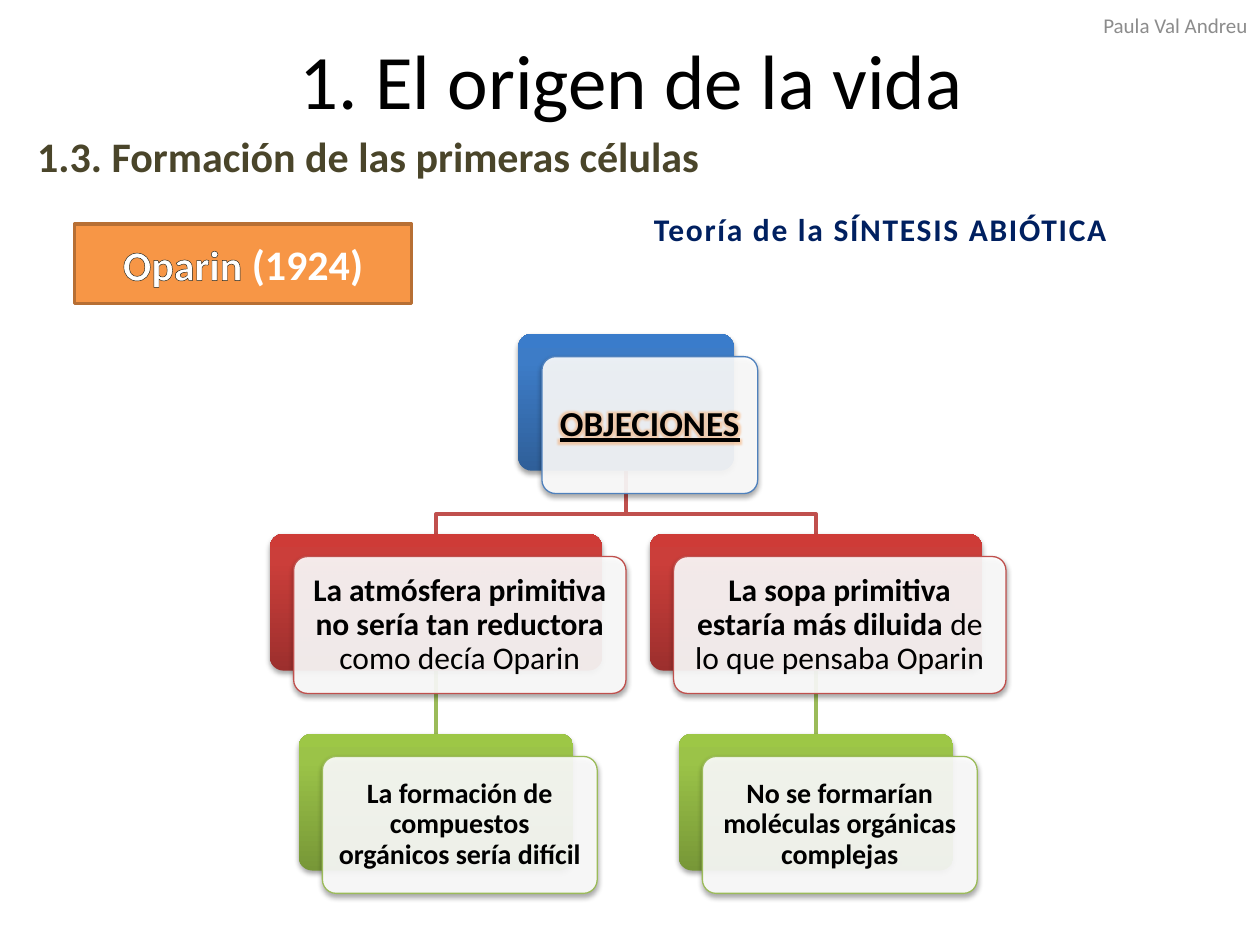
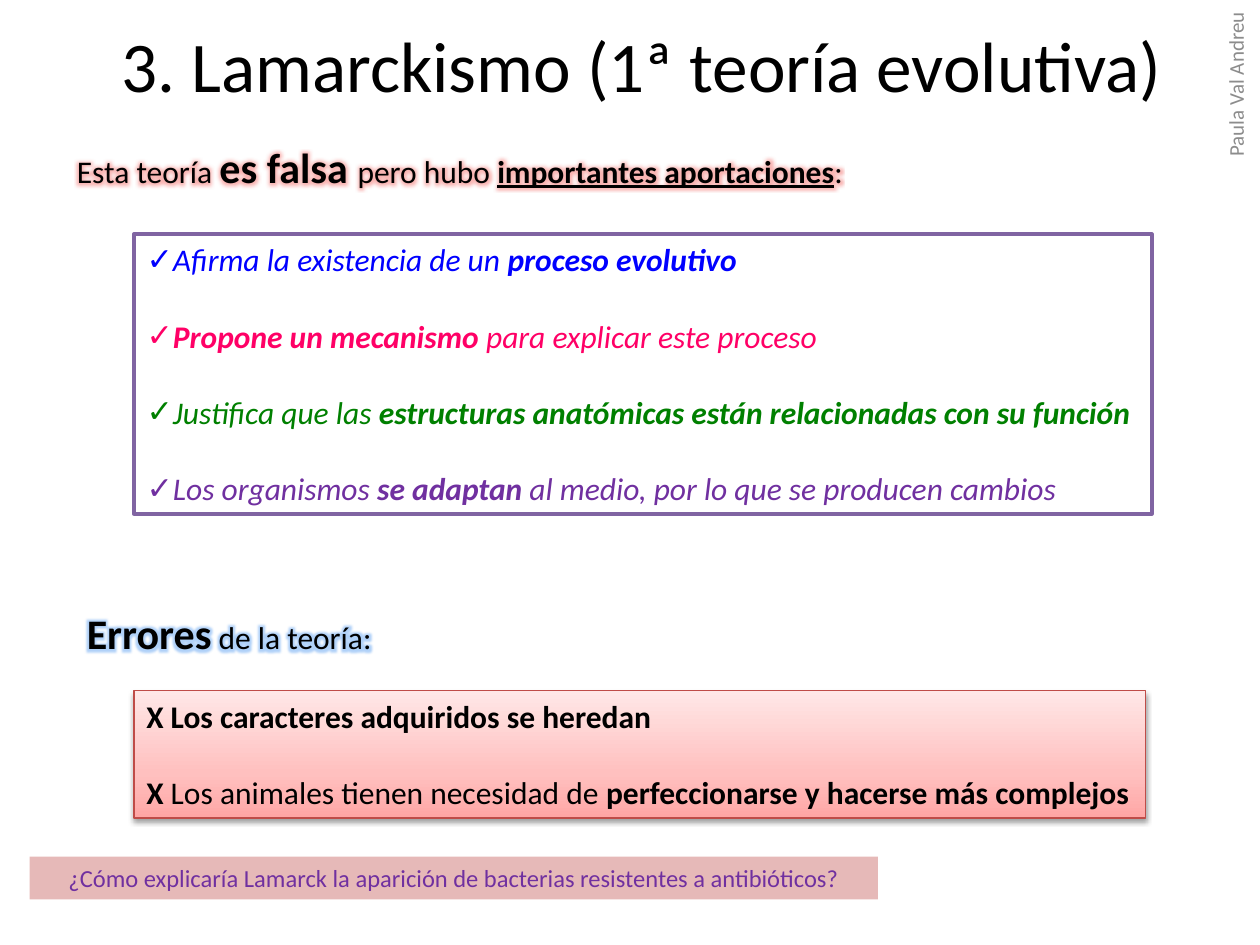
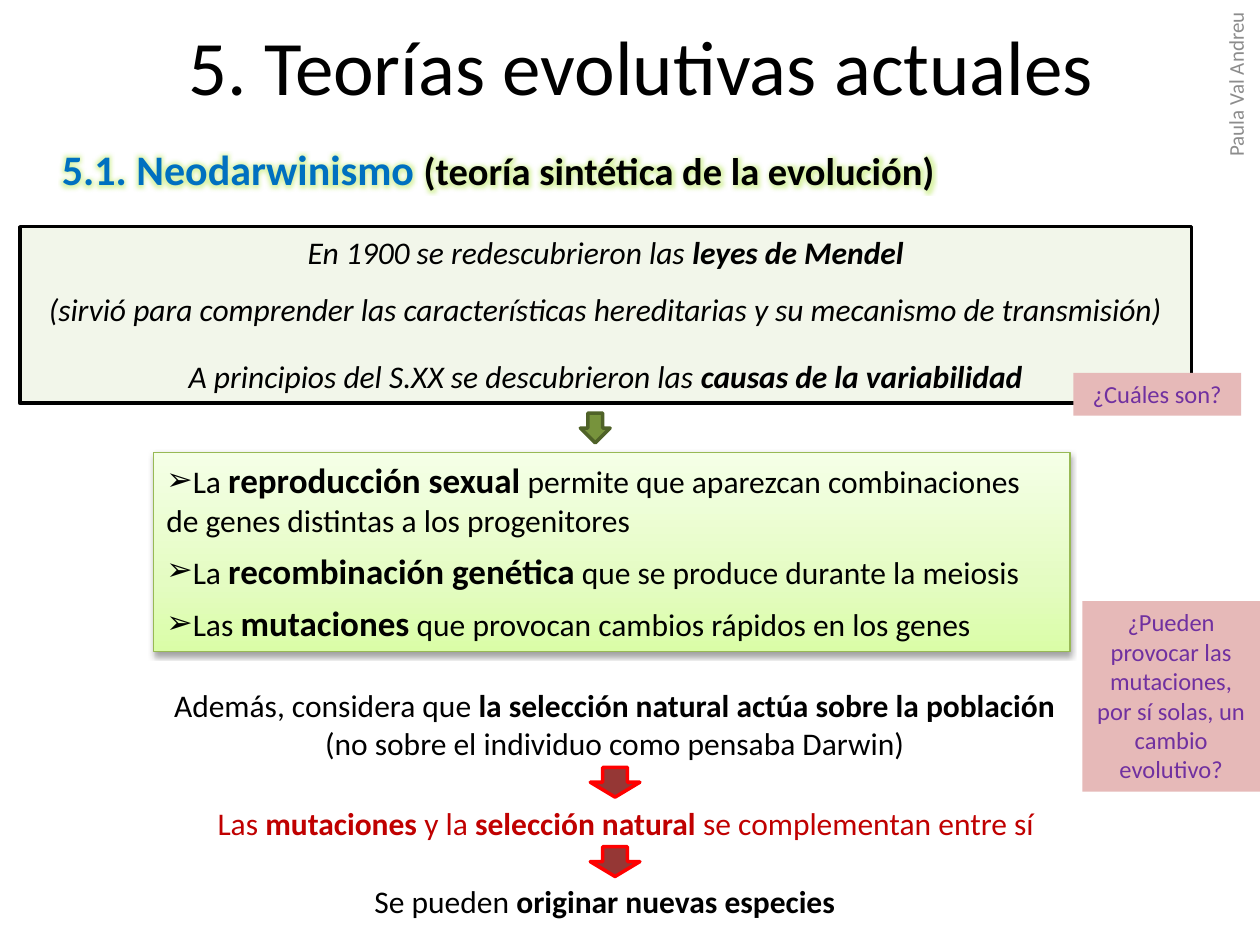
from pptx import Presentation
from pptx.dml.color import RGBColor
from pptx.enum.shapes import MSO_CONNECTOR, MSO_SHAPE
from pptx.enum.text import MSO_ANCHOR, MSO_AUTO_SIZE, PP_ALIGN
from pptx.oxml.ns import qn
from pptx.util import Cm, Pt
from lxml.etree import SubElement

FONT = "Calibri"
BLACK, WHITE, GREY = "000000", "FFFFFF", "8C8C8C"
RED, GREEN, BLUE = "C0504D", "9BBB59", "4F81BD"
PINK, PURPLE = "E6B9B8", "7030A0"

# Gradients as (position, colour), from the bottom up
DEEP_BLUE = [(0, "2F5F99"), (80, "3D7CC7"), (100, "3A7CCB")]
DEEP_RED = [(0, "9C2F2D"), (80, "CB3E3A"), (100, "CE3B37")]
DEEP_GREEN = [(0, "779737"), (80, "9BC348"), (100, "9DC746")]
PALE_RED = [(0, "FFA6A5"), (35, "FFC0BF"), (100, "FFE7E7")]
PALE_GREEN = [(0, "DAFDA7"), (35, "E4FCC2"), (100, "F5FFE7")]


def rgb(value):
    return RGBColor.from_string(value)


def add_xml(parent, tag, **attrs):
    return SubElement(parent, qn(tag), {k: str(v) for k, v in attrs.items()})


def add_color(parent, color, alpha=100):
    clr = add_xml(parent, "a:srgbClr", val=color)
    if alpha < 100:
        add_xml(clr, "a:alpha", val=alpha * 1000)


def add_run(p, text, size=18, color=BLACK, bold=False, italic=False,
            underline=False, spacing=0, outline=None, glow=None):
    r = p.add_run()
    r.text = text
    f = r.font
    f.name, f.size, f.bold, f.italic = FONT, Pt(size), bold, italic
    f.underline = underline
    f.color.rgb = rgb(color)
    rPr = f._element
    if spacing:
        rPr.set("spc", str(spacing * 100))
    if outline:
        ln = add_xml(rPr, "a:ln", w=Pt(0.75))
        add_color(add_xml(ln, "a:solidFill"), outline)
        rPr.insert(0, ln)
    if glow:
        effects = add_xml(rPr, "a:effectLst")
        add_color(add_xml(effects, "a:glow", rad=Pt(8)), glow, 40)
        rPr.find(qn("a:latin")).addprevious(effects)


def bold(text, **fmt):
    return text, dict(bold=True, **fmt)


class Deck:
    """Holds the shared style and the current slide."""

    def __init__(self):
        self.prs = Presentation()
        self.prs.slide_width, self.prs.slide_height = Cm(25.4), Cm(19.05)
        self.s = None

    def slide(self, title, layout, size=44, left=1.5, height=2.59):
        self.s = self.prs.slides.add_slide(self.prs.slide_layouts[layout])
        sp = self.s.shapes.title
        self.place(sp, left, 0, 22.86, height)
        self.set_text(sp, [[title]], align=PP_ALIGN.CENTER, anchor=MSO_ANCHOR.MIDDLE, size=size)

    def author(self, x, y, rotation=0):
        sp = self.text(x, y, 8.05, 1.02, [["Paula Val Andreu"]], align=PP_ALIGN.RIGHT,
                       anchor=MSO_ANCHOR.MIDDLE, size=12, color=GREY)
        sp.rotation = rotation

    def place(self, sp, x, y, w, h):
        sp.left, sp.top, sp.width, sp.height = Cm(x), Cm(y), Cm(w), Cm(h)

    def set_text(self, sp, paragraphs, align=PP_ALIGN.LEFT, anchor=MSO_ANCHOR.TOP, inset=None,
                 bullet=None, after=0, line_spacing=1, **fmt):
        """Each paragraph is a list of runs: plain text, or (text, format)."""
        tf = sp.text_frame
        tf.word_wrap, tf.auto_size, tf.vertical_anchor = True, MSO_AUTO_SIZE.NONE, anchor
        if inset:
            tf.margin_left = tf.margin_right = tf.margin_top = tf.margin_bottom = Cm(inset)
        for i, runs in enumerate(paragraphs):
            p = tf.add_paragraph() if i else tf.paragraphs[0]
            p.alignment, p.line_spacing = align, line_spacing
            p.space_before = Pt(0)
            p.space_after = Pt(after if i < len(paragraphs) - 1 else 0)
            if bullet:
                pPr = p._p.get_or_add_pPr()
                pPr.set("marL", "0")
                pPr.set("indent", "0")
                add_xml(pPr, "a:buChar", char=bullet)
            for run in runs:
                text, own = (run, {}) if isinstance(run, str) else run
                add_run(p, text, **{**fmt, **own})

    def paint(self, sp, fill, line=None, width=0.75, alpha=100, shadow=False):
        sp.fill.solid()
        solid = sp._element.spPr.find(qn("a:solidFill"))
        if isinstance(fill, str):
            solid.clear()
            add_color(solid, fill, alpha)
        else:
            grad = add_xml(sp._element.spPr, "a:gradFill", rotWithShape=1)
            stops = add_xml(grad, "a:gsLst")
            for position, color in fill:
                add_color(add_xml(stops, "a:gs", pos=position * 1000), color)
            add_xml(grad, "a:lin", ang=270 * 60000, scaled=0)
            solid.getparent().replace(solid, grad)
        if line:
            sp.line.color.rgb, sp.line.width = rgb(line), Pt(width)
        else:
            sp.line.fill.background()
        sp.shadow.inherit = False
        if shadow:
            effects = sp._element.spPr.find(qn("a:effectLst"))
            outer = add_xml(effects, "a:outerShdw", blurRad=Pt(3.1), dist=Pt(1.7),
                            dir=90 * 60000, rotWithShape=0)
            add_color(outer, BLACK, 36)

    def text(self, x, y, w, h, paragraphs, **fmt):
        sp = self.s.shapes.add_textbox(Cm(x), Cm(y), Cm(w), Cm(h))
        self.set_text(sp, paragraphs, **fmt)
        return sp

    def shape(self, x, y, w, h, fill, kind=MSO_SHAPE.RECTANGLE, **look):
        sp = self.s.shapes.add_shape(kind, Cm(x), Cm(y), Cm(w), Cm(h))
        self.paint(sp, fill, **look)
        return sp

    def bullets(self, x, y, w, h, items, bullet, after, look, **fmt):
        sp = self.s.placeholders[1]
        self.place(sp, x, y, w, h)
        self.paint(sp, **look)
        self.set_text(sp, items, bullet=bullet, after=after, **fmt)

    def question(self, x, y, w, h, text):
        sp = self.shape(x, y, w, h, PINK)
        self.set_text(sp, [[text]], align=PP_ALIGN.CENTER, size=14, color=PURPLE)

    def arrow(self, x, y, w, fill, line):
        self.shape(x, y, w, 0.6, fill, MSO_SHAPE.DOWN_ARROW, line=line, width=2)

    def card(self, center, y, w, gradient, line, runs, **fmt):
        x, h = center - w / 2, 2.76
        rounded = MSO_SHAPE.ROUNDED_RECTANGLE
        back = self.shape(x, y, w, h, gradient, rounded, shadow=True)
        front = self.shape(x + 0.48, y + 0.46, w, h, WHITE, rounded,
                           line=line, alpha=90, shadow=True)
        back.adjustments[0] = front.adjustments[0] = 0.1
        self.set_text(front, [runs], align=PP_ALIGN.CENTER, anchor=MSO_ANCHOR.MIDDLE,
                      inset=0.18, line_spacing=0.9, **fmt)

    def link(self, x, y1, y2, color):
        c = self.s.shapes.add_connector(MSO_CONNECTOR.STRAIGHT, Cm(x), Cm(y1), Cm(x), Cm(y2))
        c.line.color.rgb, c.line.width = rgb(color), Pt(2)
        add_xml(c._element.spPr, "a:effectLst")

    def elbow(self, x1, y1, x2, y2, bend, color):
        builder = self.s.shapes.build_freeform(Cm(x1), Cm(y1))
        builder.add_line_segments([(Cm(x1), Cm(bend)), (Cm(x2), Cm(bend)), (Cm(x2), Cm(y2))],
                                  close=False)
        sp = builder.convert_to_shape()
        sp.fill.background()
        sp.line.color.rgb, sp.line.width = rgb(color), Pt(2)
        sp.shadow.inherit = False


def origin_of_life(d):
    d.slide("1. El origen de la vida", layout=5, left=1.3, height=3.18)
    d.author(17.35, 0)
    d.text(0.5, 2.5, 17.8, 1.27, [["1.3. Formación de las primeras células"]],
           size=24, color="4A452A", bold=True)
    oparin = d.shape(1.5, 4.52, 6.8, 1.6, "F79646", line="B76F34", width=2)
    d.set_text(oparin, [[("Oparin ", dict(outline="1E1C11")), "(1924)"]], align=PP_ALIGN.CENTER,
               anchor=MSO_ANCHOR.MIDDLE, size=24, color=WHITE, bold=True)
    d.text(12.3, 4.1, 10.9, 1.8, [["Teoría de la SÍNTESIS ABIÓTICA"]],
           align=PP_ALIGN.CENTER, color="002060", bold=True, spacing=1)

    # Tree of objections: one root, two branches of two cards
    root_x, half_gap, card_h = 12.62, 3.83, 2.76
    levels = [6.73 + 4.03 * i for i in range(3)]
    branches = [
        ([bold("La atmósfera primitiva no sería tan reductora "), "como decía Oparin"],
         "La formación de compuestos orgánicos sería difícil"),
        ([bold("La sopa primitiva estaría más diluida "), "de lo que pensaba Oparin"],
         "No se formarían moléculas orgánicas complejas"),
    ]
    centers = [root_x - half_gap, root_x + half_gap]
    for x in centers:
        d.link(x, levels[1] + card_h, levels[2], GREEN)
        d.elbow(root_x, levels[0] + card_h, x, levels[1], 10.36, RED)
    d.card(root_x, levels[0], 4.35, DEEP_BLUE, BLUE, ["OBJECIONES"],
           size=20, bold=True, underline=True, glow="F79646")
    for x, (objection, result) in zip(centers, branches):
        d.card(x, levels[1], 6.7, DEEP_RED, RED, objection)
        d.card(x, levels[2], 5.54, DEEP_GREEN, GREEN, [result], size=16, bold=True)


def lamarckism(d):
    d.slide("3. Lamarckismo (1ª teoría evolutiva)", layout=1, size=40.7)
    d.author(20.88, 3.51, rotation=270)

    # Contributions
    d.text(1.3, 2.72, 20.83, 1.27,
           [["Esta teoría ", bold("es falsa ", size=24), "pero hubo ",
             bold("importantes aportaciones", underline=True), ":"]], glow="F0433E")
    blue, pink = dict(color="0000FF"), dict(color="FF0066")
    green, purple = dict(color="008000"), dict(color=PURPLE)
    d.bullets(2.7, 4.72, 20.52, 5.64, [
        [("Afirma la existencia de un ", blue), bold("proceso evolutivo", **blue)],
        [bold("Propone un mecanismo ", **pink), ("para explicar este proceso", pink)],
        [("Justifica que las ", green),
         bold("estructuras anatómicas están relacionadas con su función", **green)],
        [("Los organismos ", purple), bold("se adaptan", **purple),
         (" al medio, por lo que se producen cambios", purple)],
    ], bullet="✓", after=22, look=dict(fill=WHITE, line="8064A2", width=2), italic=True)

    # Errors
    d.text(1.5, 12.12, 20.8, 1.27, [[bold("Errores", size=24), " de la teoría:"]],
           glow="3B8DF0")
    errors = d.shape(2.7, 13.92, 20.4, 2.57, PALE_RED, line="BF4C48", shadow=True)
    d.set_text(errors, [
        [bold("X Los caracteres adquiridos se heredan")],
        [bold("X"), " Los animales tienen necesidad de ",
         bold("perfeccionarse y hacerse más complejos")],
    ], after=22)
    d.question(0.6, 17.27, 17.1, 0.86,
               "¿Cómo explicaría Lamarck la aparición de bacterias resistentes a antibióticos?")


def current_theories(d):
    center = PP_ALIGN.CENTER
    d.slide("5. Teorías evolutivas actuales", layout=1)
    d.author(20.88, 3.51, rotation=270)
    d.text(1, 2.77, 19.05, 1.27,
           [[("5.1. Neodarwinismo ", dict(size=24, color="0070C0")),
             "(teoría sintética de la evolución)"]], size=22, bold=True, glow="A6E22E")

    # Discoveries
    found = d.shape(0.4, 4.57, 23.62, 3.56, "F2F6EA", line=BLACK, width=2)
    d.set_text(found, [
        ["En 1900 se redescubrieron las ", bold("leyes de Mendel")],
        ["(sirvió para comprender las características hereditarias "
         "y su mecanismo de transmisión)"],
        ["A principios del S.XX se descubrieron las ", bold("causas de la variabilidad")],
    ], align=center, italic=True)
    _, mendel, variability = found.text_frame.paragraphs
    mendel.line_spacing = variability.line_spacing = 1.5
    mendel.space_after = Pt(6)

    # Causes of variability
    d.bullets(3.1, 9.12, 18.47, 4.01, [
        ["La ", bold("reproducción sexual", size=20),
         " permite que aparezcan combinaciones de genes distintas a los progenitores"],
        ["La ", bold("recombinación genética", size=20), " que se produce durante la meiosis"],
        ["Las ", bold("mutaciones", size=20), " que provocan cambios rápidos en los genes"],
    ], bullet="➢", after=6, look=dict(fill=PALE_GREEN, line="98B955", shadow=True))
    d.arrow(11.7, 8.33, 0.6, "77933C", "4F6228")

    # Conclusions
    d.text(2.97, 13.7, 18.85, 1.8,
           [["Además, considera que ", bold("la selección natural actúa sobre la población "),
             "(no sobre el individuo como pensaba Darwin)"]], align=center)
    d.text(2.2, 16.08, 20.83, 1.02,
           [["Las ", bold("mutaciones"), " y la ", bold("selección natural "),
             "se complementan entre sí"]], align=center, color="C00000")
    d.text(1.78, 17.65, 20.83, 1.02,
           [["Se pueden ", bold("originar nuevas especies")]], align=center)
    for y in (15.47, 17.07):
        d.arrow(11.9, y, 1, "953735", "FF0000")

    d.question(21.64, 7.52, 3.38, 0.86, "¿Cuáles son?")
    d.question(21.82, 12.12, 3.58, 3.84,
               "¿Pueden provocar las mutaciones, por sí solas, un cambio evolutivo?")


def main():
    d = Deck()
    origin_of_life(d)
    lamarckism(d)
    current_theories(d)
    d.prs.save("out.pptx")


if __name__ == "__main__":
    main()
